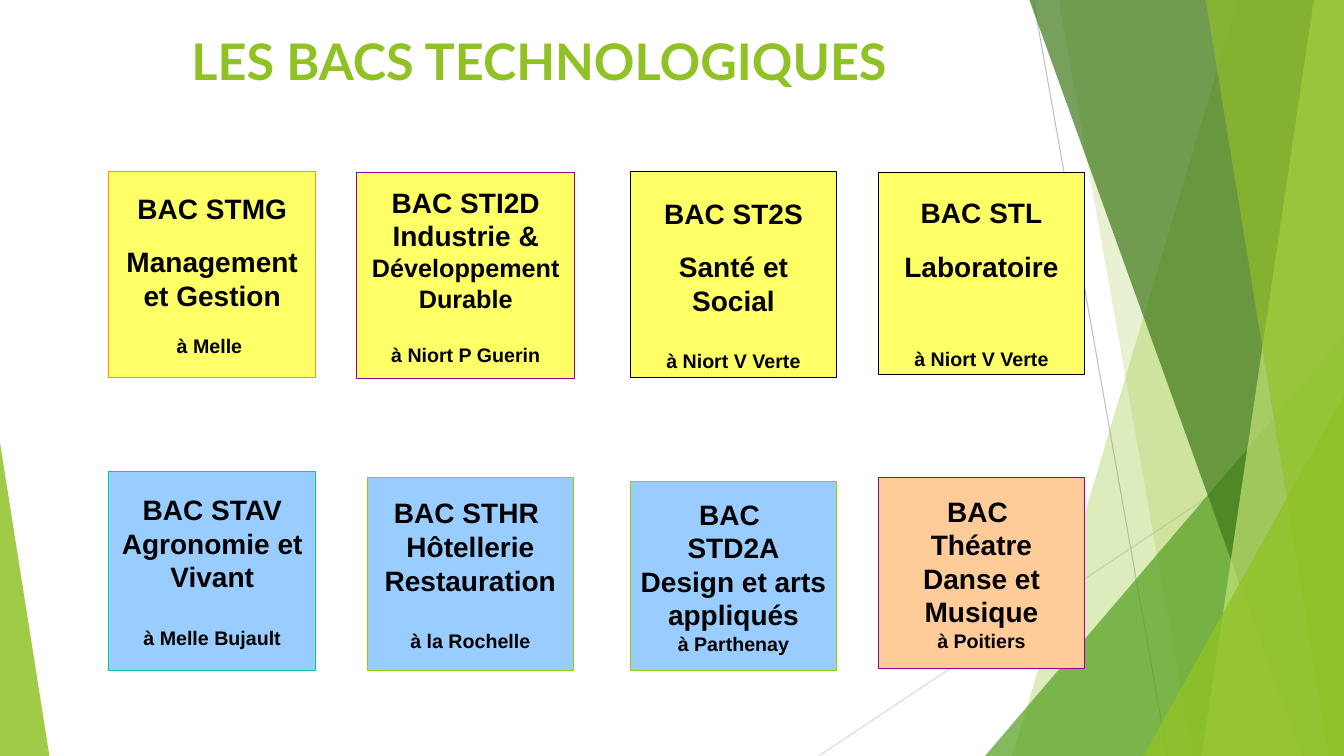
"""Build the slide that presents the technological baccalaureates."""
from dataclasses import dataclass

from lxml import etree
from pptx import Presentation
from pptx.dml.color import RGBColor
from pptx.enum.shapes import MSO_CONNECTOR, MSO_SHAPE
from pptx.enum.text import MSO_ANCHOR, PP_ALIGN
from pptx.oxml.ns import qn
from pptx.util import Emu, Pt

PX = 9144
WIDTH, HEIGHT = 1333, 750
RECTANGLE = MSO_SHAPE.RECTANGLE
TRIANGLE = MSO_SHAPE.ISOSCELES_TRIANGLE
STRAIGHT = MSO_CONNECTOR.STRAIGHT
LEFT, CENTER = PP_ALIGN.LEFT, PP_ALIGN.CENTER
TOP, MIDDLE = MSO_ANCHOR.TOP, MSO_ANCHOR.MIDDLE


@dataclass(frozen=True)
class Theme:
    green: str = "90C226"
    leaf: str = "54A021"
    forest: str = "3F7819"
    lime: str = "C0E474"
    gray: str = "BFBFBF"
    pale_gray: str = "D9D9D9"
    black: str = "000000"
    yellow: str = "FFFF66"
    blue: str = "99CCFF"
    peach: str = "FFCC99"
    orange: str = "FF9900"
    purple: str = "990099"
    olive: str = "99CC00"
    teal: str = "00CC99"
    title_font: str = "Lato"
    card_font: str = "Arial"
    title: int = 36
    heading: int = 20
    detail: int = 18
    place: int = 14
    outline: float = 0.75


THEME = Theme()


@dataclass(frozen=True)
class Ray:
    start: tuple[int, int]
    end: tuple[int, int]
    color: str


@dataclass(frozen=True)
class Band:
    """A strip that runs from its slanted left edge to the right of the slide."""
    top_x: int
    bottom_x: int
    color: str
    opacity: int


@dataclass(frozen=True)
class Corner:
    left: int
    top: int
    width: int
    apex: float
    color: str
    opacity: int


@dataclass(frozen=True)
class Line:
    text: str
    size: int = THEME.heading
    before: int = 0
    detail: str = ""


@dataclass(frozen=True)
class Card:
    left: int
    top: int
    width: int
    height: int
    fill: str
    outline: str
    lines: tuple[Line, ...]
    inset: int = 5


def place(text: str, before: int = 0) -> Line:
    """Return the small closing line that tells where the course is taught."""
    return Line(text, THEME.place, before)


RAYS = (
    Ray((1025, 0), (1158, HEIGHT), THEME.gray),
    Ray((WIDTH, 403), (812, HEIGHT), THEME.pale_gray),
)
DECOR = (
    Band(1228, 1004, THEME.green, 30),
    Band(1050, 1183, THEME.green, 20),
    Corner(977, 333, 356, 1, THEME.leaf, 72),
    Band(1021, 1291, THEME.forest, 70),
    Band(1303, 1192, THEME.lime, 70),
    Band(1196, 1318, THEME.green, 65),
    Corner(1134, 393, 199, 1, THEME.green, 80),
    Corner(0, 439, 49, 0, THEME.green, 85),
)
CARDS = (
    Card(108, 170, 205, 205, THEME.yellow, THEME.orange, (
        Line("BAC STMG"), Line("Management et Gestion", before=14),
        place("à Melle ", 16))),
    Card(354, 171, 216, 205, THEME.yellow, THEME.purple, (
        Line("BAC STI2D"), Line("Industrie & ", detail="Développement Durable"),
        place("à Niort P Guerin", 21))),
    Card(625, 170, 205, 205, THEME.yellow, THEME.black, (
        Line("BAC ST2S"), Line("Santé et Social", before=14),
        place("à Niort V Verte", 23)), inset=24),
    Card(871, 171, 205, 201, THEME.yellow, THEME.black, (
        Line("BAC STL"), Line("Laboratoire", before=14),
        place("à Niort V Verte", 46)), inset=24),
    Card(108, 468, 205, 197, THEME.blue, THEME.teal, (
        Line("BAC STAV"), Line("Agronomie et Vivant"),
        place("à Melle Bujault", 23))),
    Card(364, 474, 205, 191, THEME.blue, THEME.olive, (
        Line("BAC STHR "), Line("Hôtellerie"), Line("Restauration"),
        place("à la Rochelle", 23))),
    Card(625, 478, 205, 187, THEME.blue, THEME.olive, (
        Line("BAC "), Line("STD2A"), Line("Design et arts appliqués"),
        place("à Parthenay"))),
    Card(871, 474, 205, 189, THEME.peach, THEME.purple, (
        Line("BAC "), Line("Théatre Danse et Musique"), place("à Poitiers"))),
)


def px(*lengths: int) -> list[Emu]:
    """Turn px lengths into EMU."""
    return [Emu(length * PX) for length in lengths]


def paint(shape, color: str, opacity: int = 100, outline: str = "") -> None:
    """Set the fill, opacity and outline of a shape."""
    shape.shadow.inherit = False
    shape.fill.solid()
    shape.fill.fore_color.rgb = RGBColor.from_string(color)
    if opacity < 100:
        tint = shape.element.spPr.find(qn("a:solidFill"))[0]
        etree.SubElement(tint, qn("a:alpha"), val=str(opacity * 1000))
    if outline:
        shape.line.color.rgb = RGBColor.from_string(outline)
        shape.line.width = Pt(THEME.outline)
    else:
        shape.line.fill.background()


def add_span(para, text: str, *, size: int, font: str, color: str) -> None:
    """Add a bold run of text to a paragraph."""
    span = para.add_run()
    span.text = text
    span.font.size = Pt(size)
    span.font.name = font
    span.font.bold = True
    span.font.color.rgb = RGBColor.from_string(color)


def write(box, lines: tuple[Line, ...], *, font: str, color: str,
          align: PP_ALIGN, anchor: MSO_ANCHOR, inset: int = 5) -> None:
    """Write formatted lines into a shape, one paragraph each."""
    frame = box.text_frame
    frame.word_wrap = True
    frame.vertical_anchor = anchor
    frame.margin_left, frame.margin_right = px(10, 10)
    frame.margin_top, frame.margin_bottom = px(inset, 5)
    for index, line in enumerate(lines):
        para = frame.add_paragraph() if index else frame.paragraphs[0]
        para.alignment = align
        para.space_before = Pt(line.before)
        add_span(para, line.text, size=line.size, font=font, color=color)
        if line.detail:
            add_span(para, line.detail, size=THEME.detail, font=font, color=color)


def draw_ray(page, ray: Ray) -> None:
    """Draw a thin background line."""
    line = page.shapes.add_connector(STRAIGHT, *px(*ray.start, *ray.end))
    line.line.color.rgb = RGBColor.from_string(ray.color)
    line.line.width = Pt(THEME.outline)
    etree.SubElement(line.element.spPr, qn("a:effectLst"))


def draw_decor(page, part: Band | Corner) -> None:
    """Draw a translucent background band or corner triangle."""
    if isinstance(part, Band):
        builder = page.shapes.build_freeform(part.top_x, 0, scale=PX)
        builder.add_line_segments(
            [(WIDTH, 0), (WIDTH, HEIGHT), (part.bottom_x, HEIGHT)], close=True)
        shape = builder.convert_to_shape()
    else:
        shape = page.shapes.add_shape(
            TRIANGLE, *px(part.left, part.top, part.width, HEIGHT - part.top))
        shape.adjustments[0] = part.apex
    paint(shape, part.color, part.opacity)


def draw_card(page, card: Card) -> None:
    """Draw one baccalaureate card."""
    box = page.shapes.add_shape(
        RECTANGLE, *px(card.left, card.top, card.width, card.height))
    paint(box, card.fill, outline=card.outline)
    write(box, card.lines, font=THEME.card_font, color=THEME.black,
          align=CENTER, anchor=MIDDLE, inset=card.inset)


def main() -> None:
    """Build and save the deck."""
    deck = Presentation()
    deck.slide_width, deck.slide_height = px(WIDTH, HEIGHT)
    page = deck.slides.add_slide(deck.slide_layouts[6])
    for ray in RAYS:
        draw_ray(page, ray)
    for part in DECOR:
        draw_decor(page, part)
    for card in CARDS:
        draw_card(page, card)
    title = page.shapes.add_textbox(*px(180, 25, 820, 71))
    write(title, (Line("LES BACS TECHNOLOGIQUES", THEME.title),),
          font=THEME.title_font, color=THEME.green, align=LEFT, anchor=TOP)
    deck.save("out.pptx")


if __name__ == "__main__":
    main()
